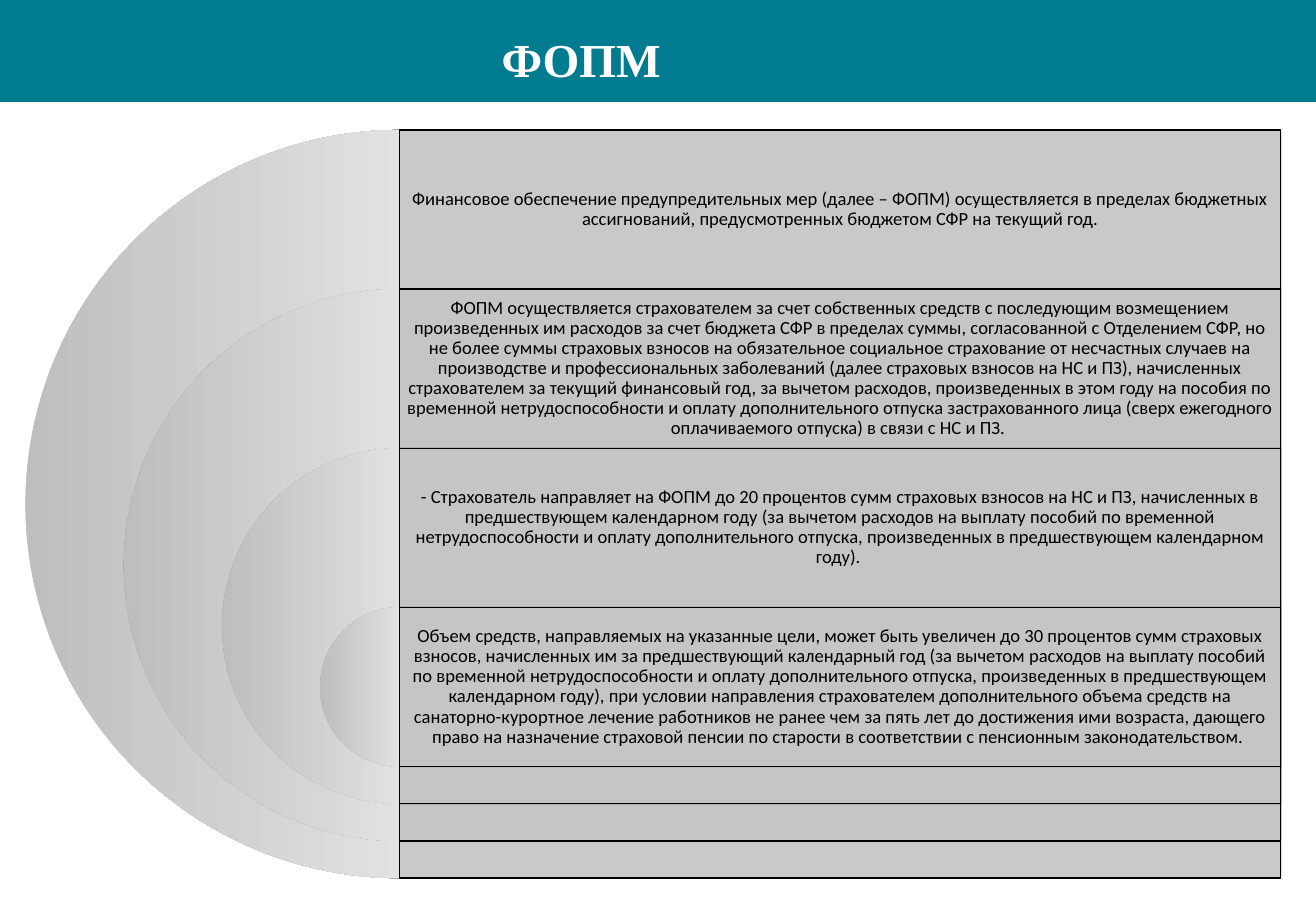
import pptx
import pptx.dml.color
import pptx.enum.shapes
import pptx.enum.text
import pptx.oxml
import pptx.oxml.ns
import pptx.util
from dataclasses import dataclass

Inches = pptx.util.Inches
Pt = pptx.util.Pt
Shapes = pptx.enum.shapes.MSO_SHAPE
Align = pptx.enum.text.PP_ALIGN
Anchor = pptx.enum.text.MSO_ANCHOR

SLIDE_WIDTH, SLIDE_HEIGHT = 10.83, 7.5
AXIS_LEFT, PANEL_WIDTH = 3.29, 7.25
FIRST_TOP, ROW_HEIGHT = 1.07, 1.31
OUTER_SIZE, SIZE_STEP = 6.16, 1.616

RULES = [
    "Финансовое обеспечение предупредительных мер (далее – ФОПМ) осуществляется "
    "в пределах бюджетных ассигнований, предусмотренных бюджетом СФР на текущий год.",
    "ФОПМ осуществляется страхователем за счет собственных средств с последующим "
    "возмещением произведенных им расходов за счет бюджета СФР в пределах суммы, "
    "согласованной с Отделением СФР, но не более суммы страховых взносов на "
    "обязательное социальное страхование от несчастных случаев на производстве и "
    "профессиональных заболеваний (далее страховых взносов на НС и ПЗ), начисленных "
    "страхователем за текущий финансовый год, за вычетом расходов, произведенных в "
    "этом году на пособия по временной нетрудоспособности и оплату дополнительного "
    "отпуска застрахованного лица (сверх ежегодного оплачиваемого отпуска) в связи "
    "с НС и ПЗ. ",
    "- Страхователь направляет на ФОПМ до 20 процентов сумм страховых взносов на НС "
    "и ПЗ, начисленных в предшествующем календарном году (за вычетом расходов на "
    "выплату пособий по временной нетрудоспособности и оплату дополнительного "
    "отпуска, произведенных в предшествующем календарном году). ",
    "Объем средств, направляемых на указанные цели, может быть увеличен до 30 "
    "процентов сумм страховых взносов, начисленных им за предшествующий календарный "
    "год (за вычетом расходов на выплату пособий по временной нетрудоспособности и "
    "оплату дополнительного отпуска, произведенных в предшествующем календарном "
    "году), при условии направления страхователем дополнительного объема средств на "
    "санаторно-курортное лечение работников не ранее чем за пять лет до достижения "
    "ими возраста, дающего право на назначение страховой пенсии по старости в "
    "соответствии с пенсионным законодательством. ",
]


@dataclass(frozen=True)
class Theme:
    header: str = "007B8F"
    title: str = "FFFFFF"
    text: str = "000000"
    outline: str = "000000"
    panel: str = "CCCCCC"
    pie_dark: str = "BEBEBE"
    pie_light: str = "F7F7F7"
    shadow: str = "000000"
    panel_alpha: int = 90
    shadow_alpha: int = 35
    title_font: str = "Times New Roman"
    body_font: str = "Calibri"
    title_size: int = 28
    body_size: int = 11


def rgb(value):
    return pptx.dml.color.RGBColor.from_string(value)


class SlideBuilder:
    def __init__(self, slide, theme):
        self.slide = slide
        self.theme = theme

    def shape(self, kind, left, top, width, height):
        shape = self.slide.shapes.add_shape(
            kind, Inches(left), Inches(top), Inches(width), Inches(height))
        shape.shadow.inherit = False
        shape.line.fill.background()
        return shape

    def header(self, height):
        bar = self.shape(Shapes.RECTANGLE, 0, 0, SLIDE_WIDTH, height)
        bar.fill.solid()
        bar.fill.fore_color.rgb = rgb(self.theme.header)

    def soft_shadow(self, shape):
        effects = shape._element.spPr.find(pptx.oxml.ns.qn("a:effectLst"))
        effects.append(pptx.oxml.parse_xml(
            f'<a:outerShdw {pptx.oxml.ns.nsdecls("a")} blurRad="0" dist="0" dir="0" '
            f'rotWithShape="0"><a:srgbClr val="{self.theme.shadow}">'
            f'<a:alpha val="{self.theme.shadow_alpha * 1000}"/>'
            f'</a:srgbClr></a:outerShdw>'))

    def half_disc(self, center, top, size):
        disc = self.shape(Shapes.PIE, center - size / 2, top, size, size)
        # Angles from 90 to 270 degrees leave the left half
        disc.adjustments[0] = 54
        disc.adjustments[1] = 162
        disc.fill.gradient()
        disc.fill.gradient_angle = 0
        stops = disc.fill.gradient_stops
        colours = (self.theme.pie_dark, self.theme.pie_light)
        for stop, position, colour in zip(stops, (0, 0.8), colours):
            stop.position = position
            stop.color.rgb = rgb(colour)
        self.soft_shadow(disc)

    def panel(self, left, top, width, height):
        panel = self.shape(Shapes.RECTANGLE, left, top, width, height)
        panel.fill.solid()
        panel.fill.fore_color.rgb = rgb(self.theme.panel)
        colour = panel._element.spPr.find(".//" + pptx.oxml.ns.qn("a:srgbClr"))
        colour.append(pptx.oxml.parse_xml(
            f'<a:alpha {pptx.oxml.ns.nsdecls("a")} '
            f'val="{self.theme.panel_alpha * 1000}"/>'))
        panel.line.color.rgb = rgb(self.theme.outline)
        panel.line.width = Pt(0.75)
        self.soft_shadow(panel)

    def text(self, words, left, top, width, height, font, size, colour):
        box = self.slide.shapes.add_textbox(
            Inches(left), Inches(top), Inches(width), Inches(height))
        box.text_frame.word_wrap = True
        para = box.text_frame.paragraphs[0]
        para.text = words
        para.font.name = font
        para.font.size = Pt(size)
        para.font.color.rgb = rgb(colour)
        return box.text_frame, para

    def title(self, words, left, top, width, height):
        theme = self.theme
        _, para = self.text(words, left, top, width, height,
                            theme.title_font, theme.title_size, theme.title)
        para.font.bold = True

    def rule(self, words, left, top, width, height):
        theme = self.theme
        frame, para = self.text(words, left, top, width, height,
                                theme.body_font, theme.body_size, theme.text)
        frame.vertical_anchor = Anchor.MIDDLE
        frame.margin_left = frame.margin_right = Inches(0.05)
        frame.margin_top = frame.margin_bottom = Inches(0.05)
        para.alignment = Align.CENTER
        para.line_spacing = 0.9


def main():
    deck = pptx.Presentation()
    deck.slide_width = Inches(SLIDE_WIDTH)
    deck.slide_height = Inches(SLIDE_HEIGHT)
    page = SlideBuilder(deck.slides.add_slide(deck.slide_layouts[6]), Theme())

    # Header
    page.header(0.84)
    page.title("ФОПМ", 4.03, 0.2, 5.19, 0.57)

    # Nested half discs, each with its panel and rule
    for level, words in enumerate(RULES):
        top = FIRST_TOP + level * ROW_HEIGHT
        size = OUTER_SIZE - level * SIZE_STEP
        page.half_disc(AXIS_LEFT, top, size)
        page.panel(AXIS_LEFT, top, PANEL_WIDTH, size)
        page.rule(words, AXIS_LEFT, top, PANEL_WIDTH, ROW_HEIGHT)

    deck.save("out.pptx")


if __name__ == "__main__":
    main()
